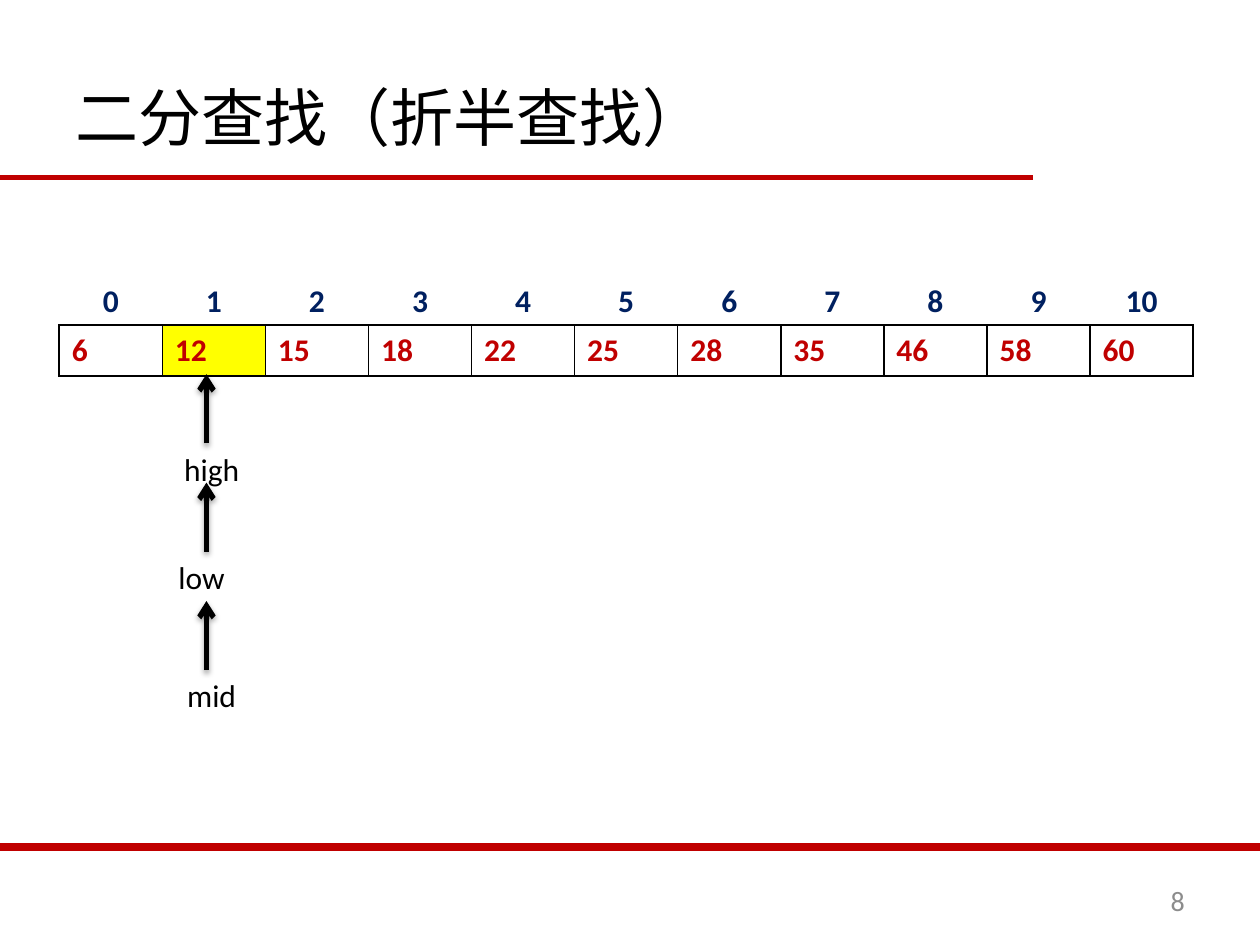
import pptx
import pptx.util
import pptx.dml.color
import pptx.enum.shapes
import pptx.enum.text
import pptx.oxml
import pptx.oxml.ns

Pt = pptx.util.Pt
RGBColor = pptx.dml.color.RGBColor
ALIGN = pptx.enum.text.PP_ALIGN
ANCHOR = pptx.enum.text.MSO_ANCHOR

BLACK = RGBColor(0x00, 0x00, 0x00)
WHITE = RGBColor(0xFF, 0xFF, 0xFF)
RED = RGBColor(0xC0, 0x00, 0x00)
NAVY = RGBColor(0x00, 0x20, 0x60)
YELLOW = RGBColor(0xFF, 0xFF, 0x00)
GREY = RGBColor(0x8C, 0x8C, 0x8C)

LATIN = "Calibri"
HAN = "Noto Sans CJK SC"
VALUES = [6, 12, 15, 18, 22, 25, 28, 35, 46, 58, 60]
MID = 1
MARKS = [("high", 213.84, 95.76), ("low", 275.76, 90), ("mid", 343.44, 95.76)]


def make(tag, inner="", **attrs):
    """Return a new drawing element."""
    pairs = "".join(f' {key}="{val}"' for key, val in attrs.items())
    space = pptx.oxml.ns.nsdecls("a")
    return pptx.oxml.parse_xml(f"<a:{tag} {space}{pairs}>{inner}</a:{tag}>")


def write(frame, text, size, color, align=ALIGN.LEFT, bold=False, face=LATIN):
    """Add one styled run to the first paragraph of a frame."""
    para = frame.paragraphs[0]
    para.alignment = align
    run = para.add_run()
    run.text = text
    run.font.size = Pt(size)
    run.font.bold = bold
    run.font.color.rgb = color
    run.font.name = face
    run.font._element.append(make("ea", typeface=face))


def label(slide, box, text, size, color, align, anchor=ANCHOR.TOP):
    """Place a wrapped text box."""
    frame = slide.shapes.add_textbox(*map(Pt, box)).text_frame
    frame.word_wrap = True
    frame.vertical_anchor = anchor
    write(frame, text, size, color, align)


def line(slide, ends, color, width, shade=""):
    """Draw a straight line with an optional shadow and return it."""
    kind = pptx.enum.shapes.MSO_CONNECTOR.STRAIGHT
    rule = slide.shapes.add_connector(kind, *map(Pt, ends))
    rule.line.color.rgb = color
    rule.line.width = Pt(width)
    rule._element.spPr.append(make("effectLst", shade))
    return rule


def arrow(slide, x, top, foot):
    """Draw an upward arrow with a soft shadow."""
    shade = (f'<a:outerShdw blurRad="{Pt(3.1)}" dist="{Pt(1.8)}" dir="5400000" '
             'rotWithShape="0"><a:srgbClr val="000000"><a:alpha val="35000"/>'
             '</a:srgbClr></a:outerShdw>')
    shaft = line(slide, (x, foot, x, top), BLACK, 3, shade)
    shaft.line._get_or_add_ln().append(make("tailEnd", type="arrow"))


def frame_cell(cell, ink):
    """Give a cell four black borders, or none."""
    fill = '<a:solidFill><a:srgbClr val="000000"/></a:solidFill>'
    for side in ("lnL", "lnR", "lnT", "lnB"):
        edge = make(side, fill if ink else "<a:noFill/>", w=Pt(1))
        cell._tc.get_or_add_tcPr().append(edge)


def row(slide, box, items, color, align, fills):
    """Place a one-row table; with no fills it stays clear and unruled."""
    grid = slide.shapes.add_table(1, len(items), *map(Pt, box)).table
    grid.first_row = grid.horz_banding = False
    for i, item in enumerate(items):
        grid.columns[i].width = Pt(box[2] / len(items))
        cell = grid.cell(0, i)
        frame_cell(cell, fills)
        if fills:
            cell.fill.solid()
            cell.fill.fore_color.rgb = fills[i]
        else:
            cell.fill.background()
        write(cell.text_frame, str(item), 18, color, align, True)


def header(slide, box):
    """Fill the title and rule it off below."""
    title = slide.shapes.title
    title.left, title.top, title.width, title.height = map(Pt, box)
    title.text_frame.vertical_anchor = ANCHOR.MIDDLE
    write(title.text_frame, "二分查找（折半查找）", 36, BLACK, face=HAN)
    y = box[1] + box[3] - 10
    line(slide, (0, y, 590.4, y), RED, 3)


def array(slide, box):
    """Place the index row over the value row."""
    x, y, w, h = box
    fills = [YELLOW if i == MID else WHITE for i in range(len(VALUES))]
    row(slide, (x, y + 28, w, h), VALUES, RED, ALIGN.LEFT, fills)
    row(slide, box, range(len(VALUES)), NAVY, ALIGN.CENTER, None)


def marks(slide, x):
    """Place the named arrows in a stack at x."""
    for name, top, left in MARKS:
        foot = top + 39.5
        arrow(slide, x, top, foot)
        label(slide, (left, foot, 50.4, 29), name, 18, BLACK, ALIGN.CENTER)


def footer(slide, box):
    """Rule off the foot and place the page number."""
    x, y, w, h = box
    line(slide, (x, y, x + w, y), RED, 4.5)
    label(slide, (x + w - 204, y + 16.5, 168, h), "8", 16, GREY,
          ALIGN.RIGHT, ANCHOR.MIDDLE)


def main():
    """Build and save the slide."""
    deck = pptx.Presentation()
    deck.slide_width, deck.slide_height = Pt(720), Pt(540)
    slide = deck.slides.add_slide(deck.slide_layouts[5])
    header(slide, (36, 21.6, 648, 90))
    array(slide, (33.84, 157.7, 648, 29.2))
    marks(slide, 118)
    footer(slide, (0, 483.84, 720, 28.8))
    deck.save("out.pptx")


if __name__ == "__main__":
    main()
